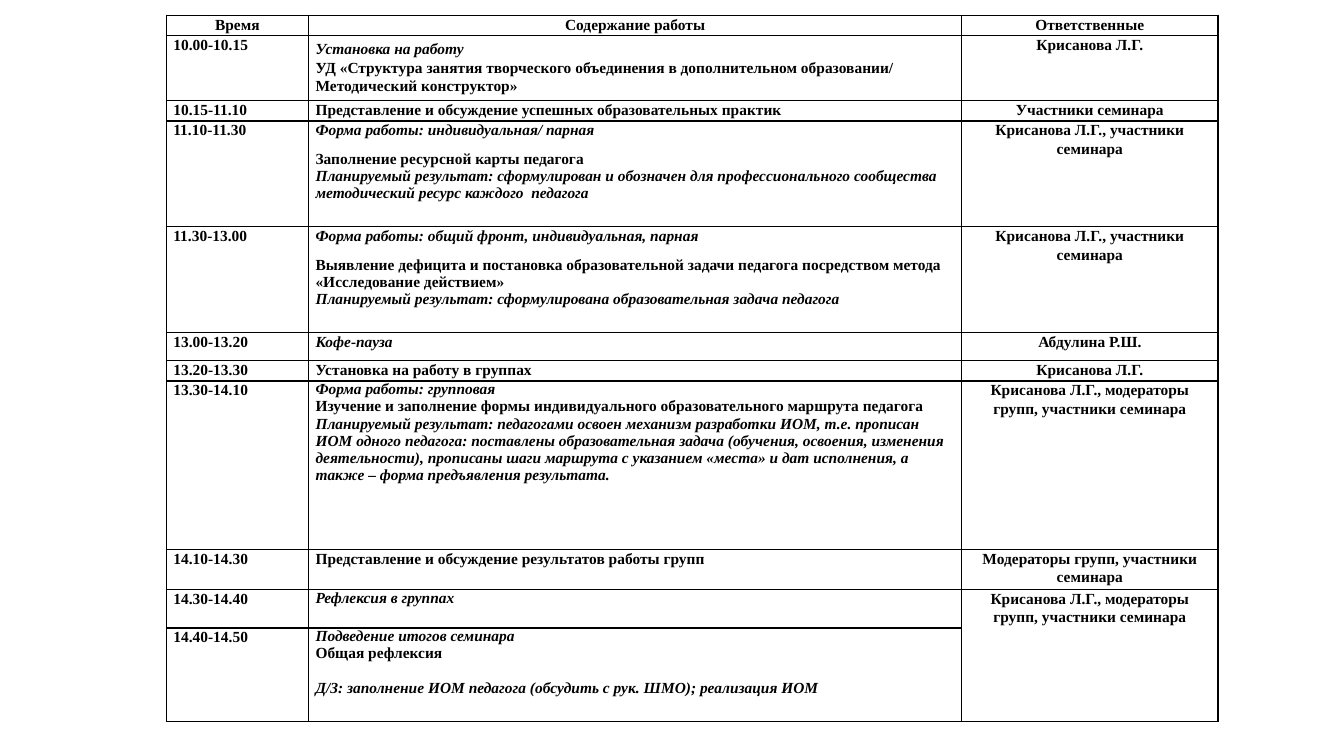
from dataclasses import dataclass

from lxml.etree import SubElement
from pptx import Presentation
from pptx.dml.color import RGBColor
from pptx.enum.text import PP_ALIGN
from pptx.oxml.ns import qn
from pptx.util import Inches, Pt

INK = "000000"
LOOSE = 1.07


def color(value):
    return RGBColor.from_string(value)


@dataclass
class Line:
    text: str
    italic: bool = False
    spacing: float = 1.0
    before: float = 0
    after: float = 0
    tail_size: float = 0


class ProgramSlide:
    font = "Times New Roman"
    size = 11
    side_margin = 0.07
    border_width = 1

    def __init__(self, presentation):
        self.slide = presentation.slides.add_slide(presentation.slide_layouts[6])

    def add_run(self, paragraph, text, size, italic):
        run = paragraph.add_run()
        run.text = text
        run.font.name = self.font
        run.font.size = Pt(size)
        run.font.bold = True
        run.font.italic = italic
        run.font.color.rgb = color(INK)

    def add_border(self, cell):
        properties = cell._tc.get_or_add_tcPr()
        for side in ("a:lnL", "a:lnR", "a:lnT", "a:lnB"):
            edge = SubElement(properties, qn(side), w=str(Pt(self.border_width)))
            fill = SubElement(edge, qn("a:solidFill"))
            SubElement(fill, qn("a:srgbClr"), val=INK)

    def fill_cell(self, cell, lines, align):
        cell.margin_left = cell.margin_right = Inches(self.side_margin)
        cell.margin_top = cell.margin_bottom = 0
        self.add_border(cell)
        cell.fill.background()
        for index, line in enumerate(lines):
            frame = cell.text_frame
            paragraph = frame.add_paragraph() if index else frame.paragraphs[0]
            paragraph.alignment = align
            paragraph.line_spacing = line.spacing
            paragraph.space_before = Pt(line.before)
            paragraph.space_after = Pt(line.after)
            self.add_run(paragraph, line.text, self.size, line.italic)
            if line.tail_size:
                self.add_run(paragraph, " ", line.tail_size, line.italic)

    def add_schedule(self, left, top, widths, heights, rows):
        schedule = self.slide.shapes.add_table(
            len(rows), len(widths), Inches(left), Inches(top),
            Inches(sum(widths)), Inches(sum(heights))).table
        schedule.first_row = schedule.horz_banding = False
        for column, width in zip(schedule.columns, widths):
            column.width = Inches(width)
        for row, height in zip(schedule.rows, heights):
            row.height = Inches(height)
        for row_index, row in enumerate(rows):
            for column_index, content in enumerate(row):
                lines = [Line(content, spacing=LOOSE)] if isinstance(content, str) else content
                centered = row_index == 0 or column_index == 2
                align = PP_ALIGN.CENTER if centered else PP_ALIGN.LEFT
                self.fill_cell(schedule.cell(row_index, column_index), lines, align)
        return schedule


def work_form(text):
    return Line("Форма работы: " + text, True, LOOSE, after=8)


def planned_result(text):
    return Line("Планируемый результат: " + text, True)


COLUMN_WIDTHS = [1.41, 6.48, 2.54]
ROW_HEIGHTS = [0.2, 0.65, 0.2, 1.05, 1.05, 0.28, 0.2, 1.67, 0.4, 0.38, 0.93]
LEADER = "Крисанова Л.Г."
LEADER_AND_MEMBERS = LEADER + ", участники семинара"
LEADER_AND_GROUPS = LEADER + ", модераторы групп, участники семинара"

PROGRAM = [
    ("Время", "Содержание работы", "Ответственные"),
    ("10.00-10.15", [
        Line("Установка на работу", True, LOOSE, tail_size=14),
        Line("УД «Структура занятия творческого объединения в дополнительном образовании/ "
             "Методический конструктор»", spacing=LOOSE),
    ], LEADER),
    ("10.15-11.10", "Представление и обсуждение успешных образовательных практик",
     "Участники семинара"),
    ("11.10-11.30", [
        work_form("индивидуальная/ парная"),
        Line("Заполнение ресурсной карты педагога"),
        planned_result("сформулирован и обозначен для профессионального сообщества "
                       "методический ресурс каждого  педагога"),
    ], LEADER_AND_MEMBERS),
    ("11.30-13.00", [
        work_form("общий фронт, индивидуальная, парная"),
        Line("Выявление дефицита и постановка образовательной задачи педагога "
             "посредством метода «Исследование действием»"),
        planned_result("сформулирована образовательная задача педагога"),
    ], LEADER_AND_MEMBERS),
    ("13.00-13.20", [Line("Кофе-пауза", True, LOOSE)], "Абдулина Р.Ш."),
    ("13.20-13.30", "Установка на работу в группах", LEADER),
    ("13.30-14.10", [
        Line("Форма работы: групповая", True),
        Line("Изучение и заполнение формы индивидуального образовательного маршрута педагога"),
        planned_result("педагогами освоен механизм разработки ИОМ, т.е. прописан ИОМ одного "
                       "педагога: поставлены образовательная задача (обучения, освоения, "
                       "изменения деятельности), прописаны шаги маршрута с указанием «места» "
                       "и дат исполнения, а также – форма предъявления результата."),
    ], LEADER_AND_GROUPS),
    ("14.10-14.30", "Представление и обсуждение результатов работы групп",
     "Модераторы групп, участники семинара"),
    ("14.30-14.40", [Line("Рефлексия в группах", True)], LEADER_AND_GROUPS),
    ("14.40-14.50", [
        Line("Подведение итогов семинара", True),
        Line("Общая рефлексия"),
        Line("Д/З: заполнение ИОМ педагога (обсудить с рук. ШМО); реализация ИОМ",
             True, before=12.6),
    ], []),
]


def main():
    presentation = Presentation()
    presentation.slide_width = Inches(13.33)
    presentation.slide_height = Inches(7.5)
    program = ProgramSlide(presentation)
    schedule = program.add_schedule(1.65, 0.15, COLUMN_WIDTHS, ROW_HEIGHTS, PROGRAM)
    schedule.cell(9, 2).merge(schedule.cell(10, 2))
    presentation.save("out.pptx")


if __name__ == "__main__":
    main()
